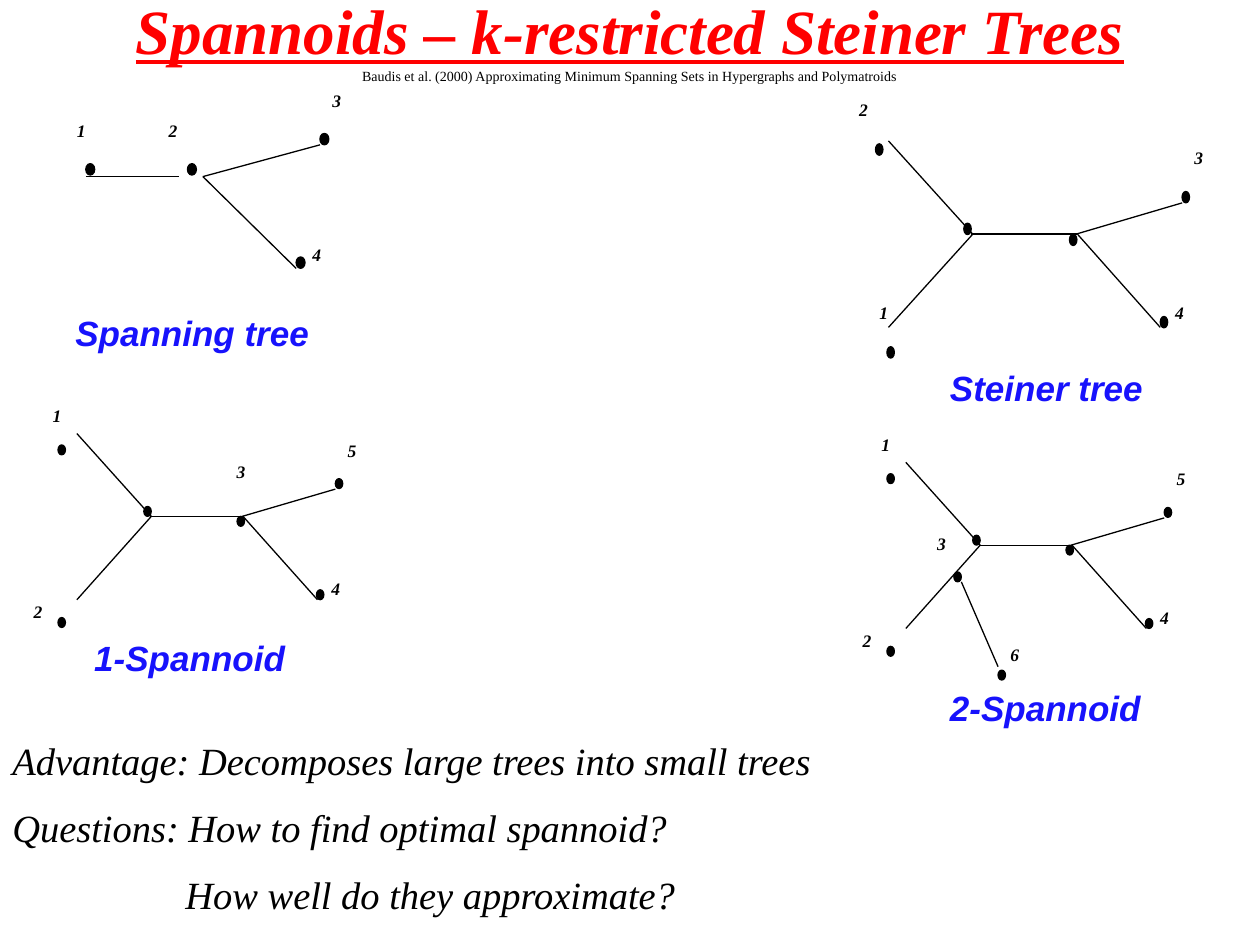
from lxml.etree import SubElement
from pptx import Presentation
from pptx.dml.color import RGBColor
from pptx.enum.shapes import MSO_CONNECTOR, MSO_SHAPE
from pptx.enum.text import MSO_ANCHOR, MSO_AUTO_SIZE, PP_ALIGN
from pptx.oxml.ns import qn
from pptx.util import Cm, Pt

COLORS = {"title": "FF0000", "ink": "000000", "caption": "1712FC"}
SERIF, SANS = "Times New Roman", "Arial"

SPANNING = {
    "dots": [(1.73, 3.3), (3.78, 3.3), (6.45, 2.69), (5.97, 5.18)],
    "edges": [(1.73, 3.56, 3.61, 3.56), (4.09, 3.56, 6.45, 2.92),
              (4.09, 3.56, 5.97, 5.41)],
    "labels": [("1", 1.3, 2.29), ("2", 3.15, 2.29), ("3", 6.45, 1.68),
               ("4", 6.05, 4.8)],
    "dot": (0.18, 0.23), "box": (1.4, 1.24),
    "caption": ("Spanning tree", 1.27, 6.15, 5.51),
}
STEINER = {
    "dots": [(17.88, 6.99), (17.65, 2.9), (23.83, 3.86), (23.39, 6.38),
             (19.43, 4.5), (21.56, 4.72)],
    "edges": [(19.58, 4.72, 21.72, 4.72), (21.69, 4.72, 23.83, 4.09),
              (21.72, 4.72, 23.39, 6.6), (17.91, 2.84, 19.61, 4.72),
              (17.91, 6.6, 19.61, 4.72)],
    "labels": [("1", 17.48, 5.97), ("2", 17.07, 1.88), ("3", 23.83, 2.84),
               ("4", 23.44, 5.97)],
    "dot": (0.15, 0.23), "box": (1.27, 1.24),
    "caption": ("Steiner tree", 18.9, 7.26, 5.08),
}
SPANNOID = {
    "dots": [(1.17, 12.45), (6.76, 9.65), (6.38, 11.89), (2.9, 10.21),
             (4.78, 10.41), (1.17, 8.97)],
    "edges": [(3.02, 10.41, 4.9, 10.41), (4.88, 10.41, 6.76, 9.86),
              (4.9, 10.41, 6.4, 12.09), (1.55, 8.74, 3.05, 10.41),
              (1.55, 12.09, 3.05, 10.41)],
    "labels": [("1", 0.81, 8.05), ("2", 0.43, 11.99), ("4", 6.43, 11.53),
               ("5", 6.76, 8.74)],
    "dot": (0.15, 0.2), "box": (1.12, 1.12),
}
ONE_SPANNOID = {
    "dots": [], "edges": [], "labels": [("3", 4.52, 9.17)],
    "caption": ("1-Spannoid", 1.65, 12.7, 4.65),
}
TWO_SPANNOID = {
    "dots": [(2.52, 10.95), (3.41, 12.93)],
    "edges": [(2.67, 11.15, 3.41, 12.86)],
    "labels": [("3", 1.93, 10.04), ("6", 3.41, 12.27)],
    "caption": ("2-Spannoid", 2.19, 13.14, 4.65),
}


def extend(base, extra):
    parts = {k: base[k] + extra[k] for k in ("dots", "edges", "labels")}
    return {**base, **extra, **parts}


class Deck:
    def __init__(self, width, height):
        self.prs = Presentation()
        self.prs.slide_width, self.prs.slide_height = Cm(width), Cm(height)
        self.s = self.prs.slides.add_slide(self.prs.slide_layouts[5])

    def run(self, p, text, size, font=SERIF, color="ink", bold=False,
            italic=True, underline=False):
        r = p.add_run()
        r.text = text
        f = r.font
        f.size, f.name = Pt(size), font
        f.bold, f.italic, f.underline = bold, italic, underline
        f.color.rgb = RGBColor.from_string(COLORS[color])

    def title(self, text, source):
        sp = self.s.shapes.title
        sp.left, sp.top, sp.width, sp.height = Cm(0), Cm(-0.3), Cm(25.4), Cm(2.13)
        tf = sp.text_frame
        tf.auto_size = MSO_AUTO_SIZE.NONE
        tf.vertical_anchor = MSO_ANCHOR.MIDDLE
        p = tf.paragraphs[0]
        self.run(p, text, 36, color="title", bold=True, underline=True)
        p2 = tf.add_paragraph()
        self.run(p2, source, 8, italic=False)
        for para in (p, p2):
            para.alignment = PP_ALIGN.CENTER
            para.space_before = Pt(0)

    def textbox(self, shapes, x, y, w, h):
        tf = shapes.add_textbox(Cm(x), Cm(y), Cm(w), Cm(h)).text_frame
        tf.word_wrap = True
        return tf

    def dot(self, shapes, x, y, w, h):
        sp = shapes.add_shape(MSO_SHAPE.OVAL, Cm(x), Cm(y), Cm(w), Cm(h))
        sp.shadow.inherit = False
        sp.fill.solid()
        for color in (sp.fill.fore_color, sp.line.color):
            color.rgb = RGBColor.from_string(COLORS["ink"])
        sp.line.width = Pt(0.75)

    def edge(self, shapes, x1, y1, x2, y2):
        c = shapes.add_connector(MSO_CONNECTOR.STRAIGHT,
                                 Cm(x1), Cm(y1), Cm(x2), Cm(y2))
        c.line.color.rgb = RGBColor.from_string(COLORS["ink"])
        c.line.width = Pt(0.75)
        SubElement(c._element.spPr, qn("a:effectLst"))

    def graph(self, g, dx=0, dy=0):
        shapes = self.s.shapes.add_group_shape().shapes
        for x, y in g["dots"]:
            self.dot(shapes, x + dx, y + dy, *g["dot"])
        for x1, y1, x2, y2 in g["edges"]:
            self.edge(shapes, x1 + dx, y1 + dy, x2 + dx, y2 + dy)
        for text, x, y in g["labels"]:
            tf = self.textbox(shapes, x + dx, y + dy, *g["box"])
            self.run(tf.paragraphs[0], text, 10, bold=True)
        text, x, y, w = g["caption"]
        tf = self.textbox(shapes, x + dx, y + dy, w, 1.09)
        self.run(tf.paragraphs[0], text, 20, SANS, "caption", bold=True)

    def body(self, lines):
        tf = self.textbox(self.s.shapes, 0, 14.73, 25.4, 4.01)
        for i, (text, indent) in enumerate(lines):
            p = tf.add_paragraph() if i else tf.paragraphs[0]
            p.space_before = Pt(12 if i else 0)
            p._p.get_or_add_pPr().set("marL", str(Cm(indent)))
            self.run(p, text, 22)


def main():
    deck = Deck(25.4, 19.05)
    deck.title("Spannoids – k-restricted Steiner Trees",
               "Baudis et al. (2000) Approximating Minimum Spanning Sets "
               "in Hypergraphs and Polymatroids")
    deck.graph(SPANNING)
    deck.graph(STEINER)
    deck.graph(extend(SPANNOID, ONE_SPANNOID))
    deck.graph(extend(SPANNOID, TWO_SPANNOID), dx=16.71, dy=0.58)
    deck.body([("Advantage: Decomposes large trees into small trees", 0),
               ("Questions: How to find optimal spannoid?", 0),
               ("How well do they approximate?", 3.49)])
    deck.prs.save("out.pptx")


if __name__ == "__main__":
    main()
